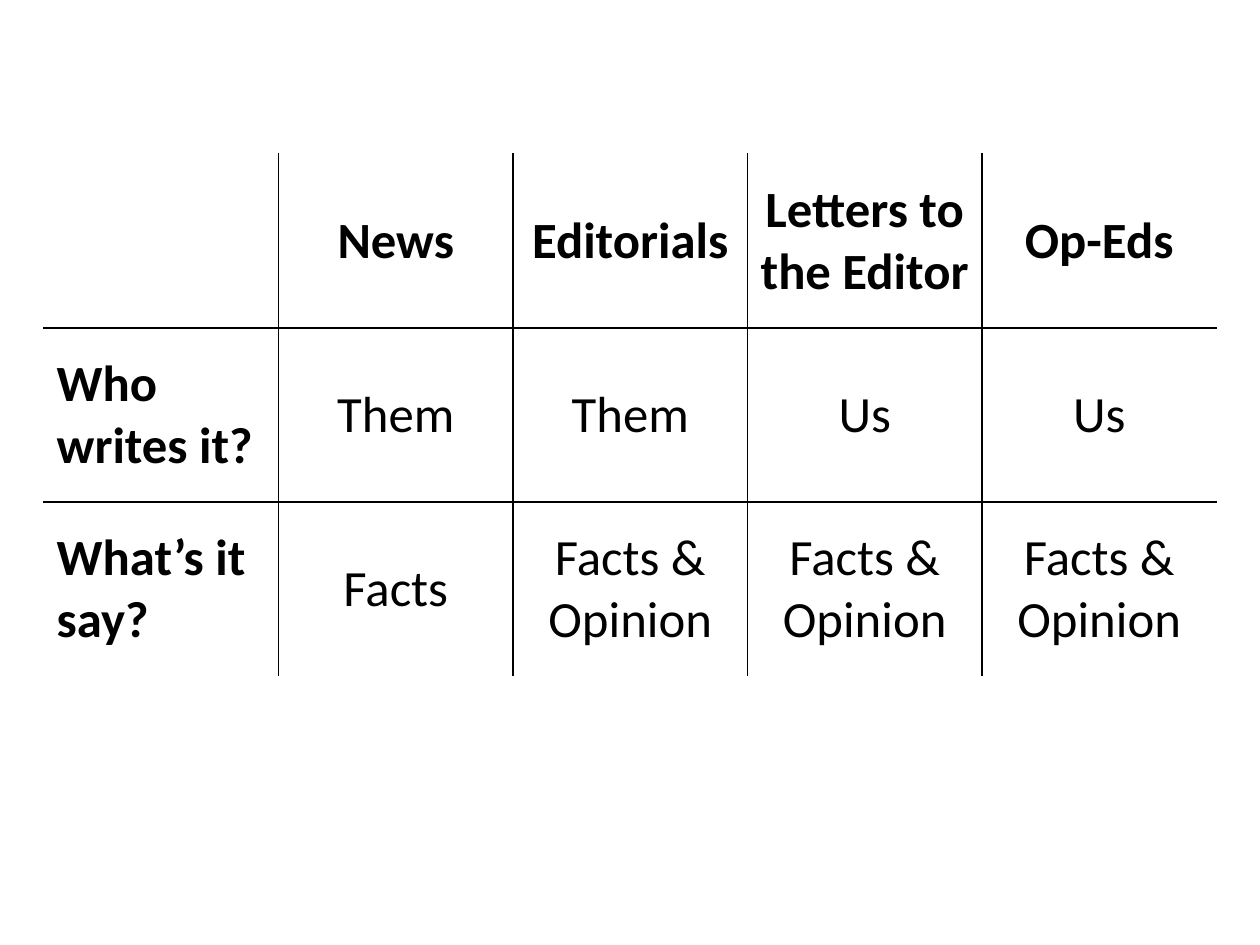
import pptx
import pptx.util
import pptx.dml.color
import pptx.enum.text
import pptx.oxml
import pptx.oxml.ns

Pt = pptx.util.Pt
ALIGN = pptx.enum.text.PP_ALIGN
INK, PAPER = "000000", "FFFFFF"

COMPARISON = [
    ["", "News", "Editorials", "Letters to the Editor", "Op-Eds"],
    ["Who writes it?", "Them", "Them", "Us", "Us"],
    ["What’s it say?", "Facts", "Facts & Opinion", "Facts & Opinion", "Facts & Opinion"],
]
LEFT, TOP = 25.2, 87.8
COLUMN_WIDTH, ROW_HEIGHT = 134, 99.6


def colour(hex_value):
    return pptx.dml.color.RGBColor.from_string(hex_value)


def write(cell, text, size=29, font="Calibri", ink=INK, bold=False, align=ALIGN.CENTER):
    cell.vertical_anchor = pptx.enum.text.MSO_ANCHOR.MIDDLE
    paragraph = cell.text_frame.paragraphs[0]
    paragraph.text = text
    paragraph.alignment = align
    paragraph.font.size = Pt(size)
    paragraph.font.name = font
    paragraph.font.bold = bold
    paragraph.font.color.rgb = colour(ink)


def draw_borders(cell, outer_sides):
    properties = cell._tc.get_or_add_tcPr()
    for position, side in enumerate("LRTB"):
        ink = PAPER if side in outer_sides else INK
        properties.insert(position, pptx.oxml.parse_xml(
            f'<a:ln{side} {pptx.oxml.ns.nsdecls("a")} w="{Pt(1)}">'
            f'<a:solidFill><a:srgbClr val="{ink}"/></a:solidFill></a:ln{side}>'))


def main():
    deck = pptx.Presentation()
    deck.slide_width, deck.slide_height = Pt(720), Pt(540)
    slide = deck.slides.add_slide(deck.slide_layouts[6])
    row_count, column_count = len(COMPARISON), len(COMPARISON[0])
    table = slide.shapes.add_table(
        row_count, column_count, Pt(LEFT), Pt(TOP),
        Pt(COLUMN_WIDTH * column_count), Pt(ROW_HEIGHT * row_count)).table
    for column in table.columns:
        column.width = Pt(COLUMN_WIDTH)
    for row in table.rows:
        row.height = Pt(ROW_HEIGHT)

    for r, entries in enumerate(COMPARISON):
        for c, entry in enumerate(entries):
            cell = table.cell(r, c)
            write(cell, entry, bold=r == 0 or c == 0,
                  align=ALIGN.LEFT if c == 0 else ALIGN.CENTER)
            cell.fill.background()
            edges = {"L": c == 0, "R": c == column_count - 1,
                     "T": r == 0, "B": r == row_count - 1}
            draw_borders(cell, [side for side, outer in edges.items() if outer])

    deck.save("out.pptx")


if __name__ == "__main__":
    main()
